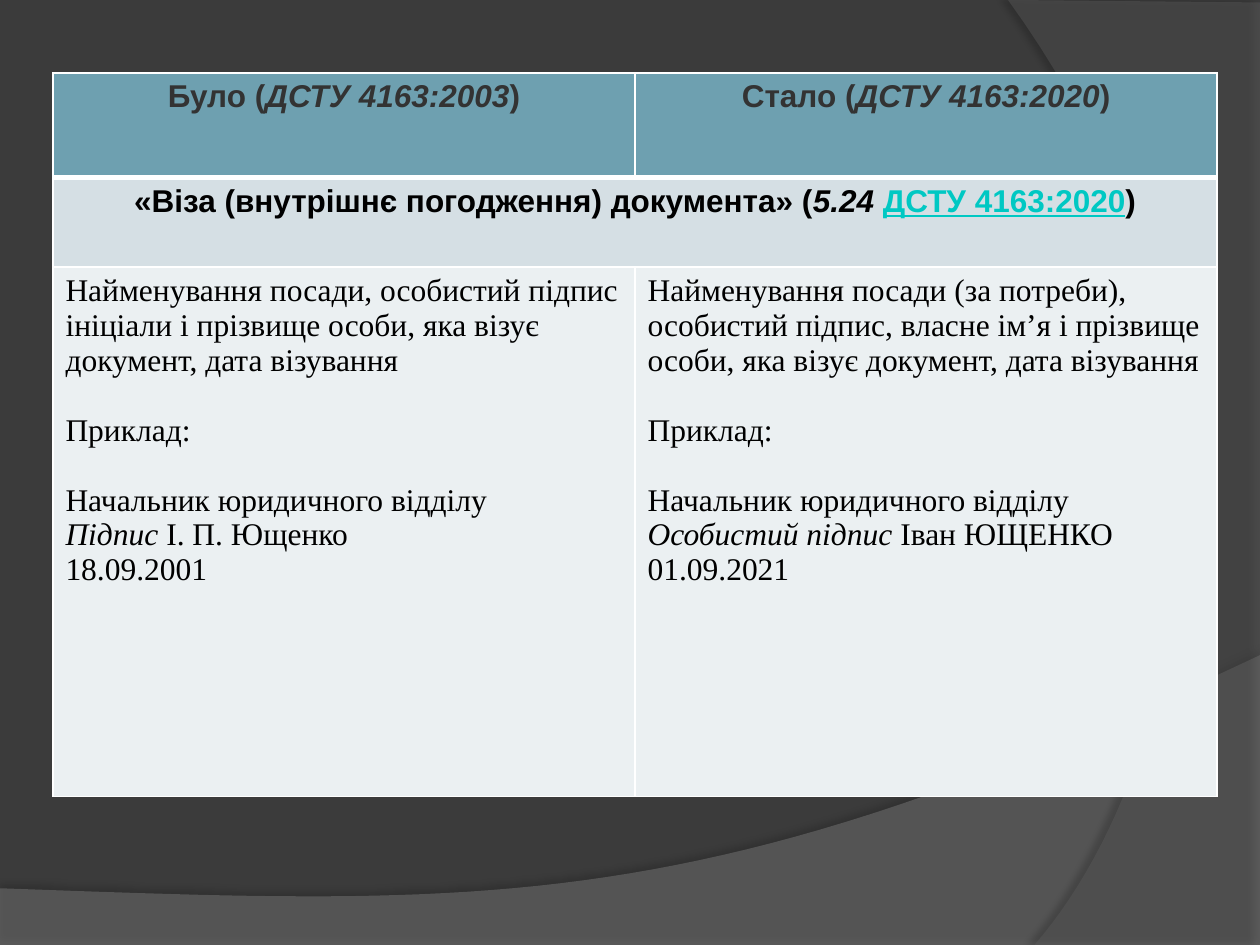
"""Build a slide with a table comparing the visa requisite in two editions of a standard."""
from lxml import etree
from pptx import Presentation, util as u
from pptx.dml.color import RGBColor
from pptx.enum import text
from pptx.oxml import ns

BACKGROUND = RGBColor(0x3B, 0x3B, 0x3B)
LOWER_WAVE = RGBColor(0x7F, 0x7F, 0x7F)
RIGHT_WAVE = RGBColor(0x5E, 0x5E, 0x5E)
HEADER_FILL = RGBColor(0x6E, 0xA0, 0xB0)
SECTION_FILL = RGBColor(0xD5, 0xDF, 0xE4)
BODY_FILL = RGBColor(0xEB, 0xF0, 0xF2)
HEADER_TEXT = RGBColor(0x33, 0x33, 0x33)
BLACK = RGBColor(0, 0, 0)
LINK_TEXT = RGBColor(0x00, 0xC8, 0xC3)
WHITE = RGBColor(0xFF, 0xFF, 0xFF)
CURVE_STEPS = 48


def add_element(parent, tag, **attributes):
    values = {name: str(value) for name, value in attributes.items()}
    return etree.SubElement(parent, ns.qn(tag), values)


def curve(start, first, second, end):
    points = []
    for step in range(CURVE_STEPS + 1):
        t = step / CURVE_STEPS
        weights = ((1 - t) ** 3, 3 * t * (1 - t) ** 2, 3 * t * t * (1 - t), t ** 3)
        controls = zip(weights, (start, first, second, end))
        weighted = [(w * x, w * y) for w, (x, y) in controls]
        points.append(tuple(map(sum, zip(*weighted))))
    return points


presentation = Presentation()
presentation.slide_width, presentation.slide_height = u.Inches(10), u.Inches(7.5)
slide = presentation.slides.add_slide(presentation.slide_layouts[6])
slide.background.fill.solid()
slide.background.fill.fore_color.rgb = BACKGROUND

lower_outline = [(0, 7.5), (10, 7.5)] + curve((10, 5.2), (5.59, 7.29), (3.91, 7.19), (0, 7.05))
right_outline = [(10, 0.02), (10, 7.5)] + curve((8.21, 7.5), (9.35, 6.19), (10.18, 3), (8, 0))
waves = (
    (lower_outline, LOWER_WAVE, 45, 35, 3.5, 270),
    (right_outline, RIGHT_WAVE, 40, 45, 4, 180),
)
for outline, color, opacity, shadow_opacity, distance, angle in waves:
    points = [(u.Inches(x), u.Inches(y)) for x, y in outline]
    builder = slide.shapes.build_freeform(*points[0], scale=1.0)
    builder.add_line_segments(points[1:], close=True)
    shape = builder.convert_to_shape()
    shape.fill.solid()
    shape.fill.fore_color.rgb = color
    shape.line.fill.background()
    shape.shadow.inherit = False
    fill_color = shape.element.spPr.find(ns.qn("a:solidFill"))[0]
    add_element(fill_color, "a:alpha", val=opacity * 1000)
    effects = shape.element.spPr.find(ns.qn("a:effectLst"))
    shadow = add_element(effects, "a:outerShdw", blurRad=u.Pt(4), dist=u.Pt(distance),
                         dir=angle * 60000, algn="ctr", rotWithShape=0)
    shadow_color = add_element(shadow, "a:srgbClr", val=BLACK)
    add_element(shadow_color, "a:alpha", val=shadow_opacity * 1000)

column_width = u.Inches(4.62)
row_heights = [u.Inches(height) for height in (0.83, 0.71, 4.2)]
table = slide.shapes.add_table(3, 2, u.Inches(0.42), u.Inches(0.58),
                               2 * column_width, sum(row_heights)).table
for column in table.columns:
    column.width = column_width
for row, height in zip(table.rows, row_heights):
    row.height = height
table.cell(1, 0).merge(table.cell(1, 1))

row_fills = (HEADER_FILL, SECTION_FILL, BODY_FILL)
for row_index, fill in enumerate(row_fills):
    for column_index in range(2):
        cell = table.cell(row_index, column_index)
        properties = cell._tc.get_or_add_tcPr()
        widths = {"L": 1, "R": 1, "T": 3 if row_index == 1 else 1, "B": 3 if row_index == 0 else 1}
        for side, width in widths.items():
            border = add_element(properties, f"a:ln{side}", w=u.Pt(width))
            add_element(add_element(border, "a:solidFill"), "a:srgbClr", val=WHITE)
        cell.fill.solid()
        cell.fill.fore_color.rgb = fill

plain, italic, link = (False, False), (True, False), (False, True)
contents = {
    (0, 0): [[("Було (", plain), ("ДСТУ 4163:2003", italic), (")", plain)]],
    (0, 1): [[("Стало (", plain), ("ДСТУ 4163:2020", italic), (")", plain)]],
    (1, 0): [[("«Віза (внутрішнє погодження) документа» (", plain), ("5.24 ", italic),
              ("ДСТУ 4163:2020", link), (")", plain)]],
    (2, 0): [[("Найменування посади, особистий підпис", plain)],
             [("ініціали і прізвище особи, яка візує документ, дата візування", plain)],
             [("Приклад:", plain)],
             [("Начальник юридичного відділу", plain)],
             [("Підпис", italic), (" І. П. Ющенко", plain)],
             [("18.09.2001", plain)]],
    (2, 1): [[("Найменування посади (за потреби), особистий підпис, власне ім’я і прізвище "
               "особи, яка візує документ, дата візування", plain)],
             [("Приклад:", plain)],
             [("Начальник юридичного відділу", plain)],
             [("Особистий підпис", italic), (" Іван ЮЩЕНКО", plain)],
             [("01.09.2021", plain)]],
}
spaced_lines = ("Приклад:", "Начальник юридичного відділу")
for (row_index, column_index), lines in contents.items():
    is_body = row_index == 2
    frame = table.cell(row_index, column_index).text_frame
    for line_index, line in enumerate(lines):
        paragraph = frame.add_paragraph() if line_index else frame.paragraphs[0]
        paragraph.alignment = text.PP_ALIGN.LEFT if is_body else text.PP_ALIGN.CENTER
        if line[0][0] in spaced_lines:
            paragraph.space_before = u.Pt(20)
        for wording, (is_italic, is_link) in line:
            run = paragraph.add_run()
            run.text = wording
            run.font.name = "Times New Roman" if is_body else "Arial"
            run.font.size = u.Pt(18)
            run.font.bold = not is_body
            run.font.italic = is_italic
            run.font.underline = is_link
            run.font.color.rgb = LINK_TEXT if is_link else HEADER_TEXT if row_index == 0 else BLACK

presentation.save("out.pptx")
